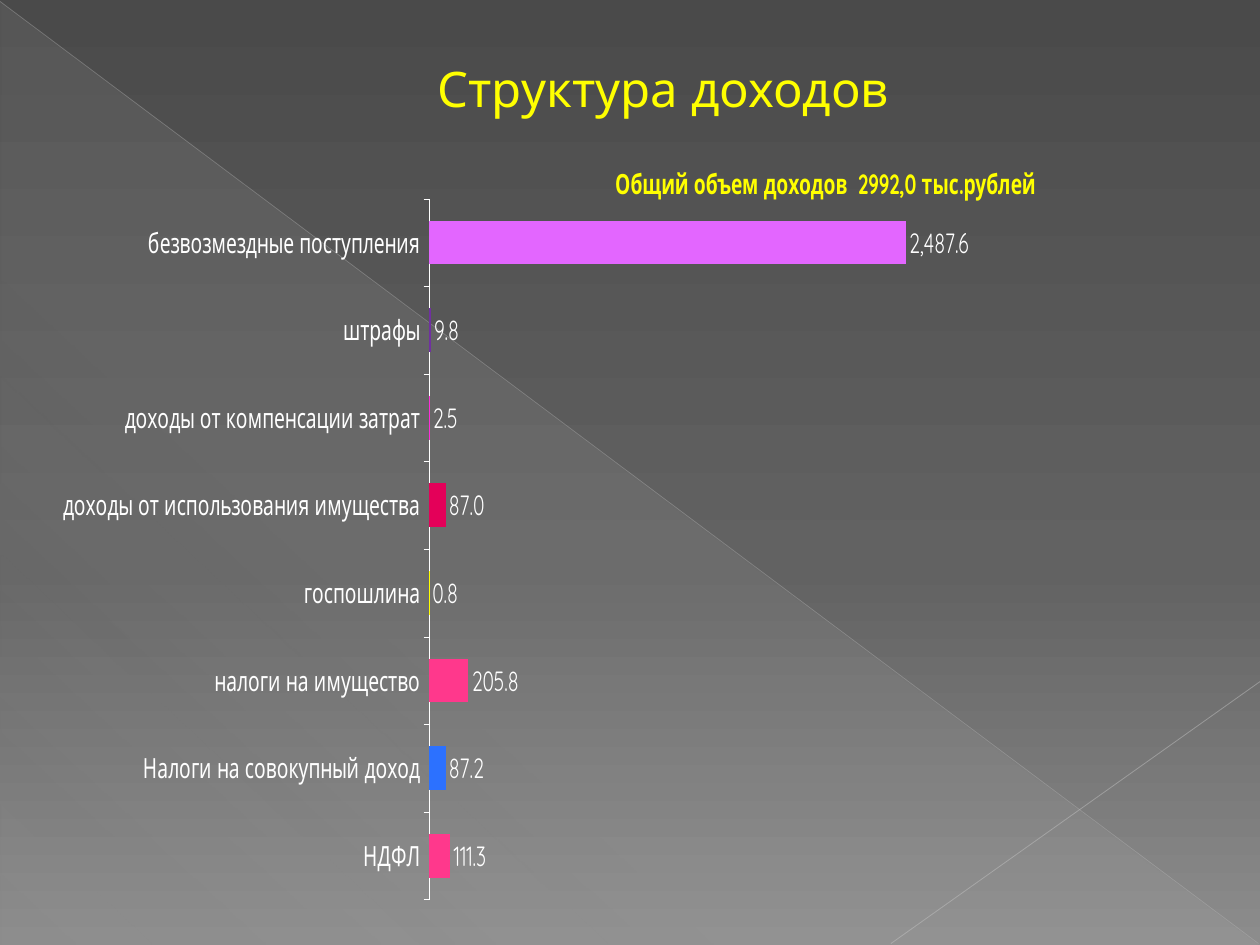
from lxml import etree
from pptx import Presentation
from pptx.chart.data import CategoryChartData
from pptx.dml.color import RGBColor
from pptx.enum.chart import XL_CHART_TYPE as ChartType
from pptx.enum.chart import XL_LABEL_POSITION as LabelPosition
from pptx.enum.chart import XL_TICK_MARK as TickMark
from pptx.enum.shapes import MSO_CONNECTOR as Connector
from pptx.enum.shapes import MSO_SHAPE as Shape
from pptx.enum.text import MSO_ANCHOR as Anchor
from pptx.enum.text import PP_ALIGN as Align
from pptx.oxml import parse_xml
from pptx.oxml.ns import nsdecls, qn
from pptx.util import Cm, Pt

FONT = "Quicksand"
COLORS = {
    "heading": "FFFF00", "heading_edge": "B12761", "text": "FFFFFF",
    "back_top": "4A4A4A", "back_middle": "626262", "back_bottom": "8C8C8C",
    "triangle": "D2D2D2", "diagonal": "BFBFBF", "corner": "C6C6C6",
    "pink": "FF388C", "blue": "2C71FF", "yellow": "FFFF00", "crimson": "E40059",
    "magenta": "FF2BD8", "purple": "7030A0", "violet": "E366FF",
}
INCOME = [
    ("НДФЛ", 111.3, "pink"),
    ("Налоги на совокупный доход", 87.2, "blue"),
    ("налоги на имущество", 205.8, "pink"),
    ("госпошлина", 0.8, "yellow"),
    ("доходы от использования имущества", 87.0, "crimson"),
    ("доходы от компенсации затрат", 2.5, "magenta"),
    ("штрафы", 9.8, "purple"),
    ("безвозмездные поступления", 2487.6, "violet"),
]


def rgb(name):
    return RGBColor.from_string(COLORS[name])


def set_gradient(fill, stops, angle):
    """Fill with (position %, colour name, opacity %) stops, angle clockwise."""
    fill.gradient()
    stop_list = fill.gradient_stops[0]._gs.getparent()
    gradient = stop_list.getparent()
    marks = "".join(
        f'<a:gs pos="{position * 1000}"><a:srgbClr val="{COLORS[color]}">'
        f'<a:alpha val="{opacity * 1000}"/></a:srgbClr></a:gs>'
        for position, color, opacity in stops)
    gradient.replace(stop_list, parse_xml(f'<a:gsLst {nsdecls("a")}>{marks}</a:gsLst>'))
    gradient.find(qn("a:lin")).set("ang", str(angle * 60000))


def add_triangle(slide):
    triangle = slide.shapes.add_shape(
        Shape.RIGHT_TRIANGLE, Cm(0.02), Cm(0.04), Cm(25.36), Cm(19))
    triangle.shadow.inherit = False
    triangle.line.fill.background()
    set_gradient(triangle.fill, [(0, "triangle", 10), (70, "triangle", 8),
                                 (100, "triangle", 1)], 133)


def add_line(slide, start, end, color, width, opacity):
    line = slide.shapes.add_connector(
        Connector.STRAIGHT, *(Cm(length) for length in start + end))
    line.line.color.rgb = rgb(color)
    line.line.width = Pt(width)
    tint = line.line._ln.find(".//" + qn("a:srgbClr"))
    etree.SubElement(tint, qn("a:alpha")).set("val", str(opacity * 1000))
    etree.SubElement(line._element.spPr, qn("a:effectLst"))


def set_font(font, size, color, bold=False):
    font.name = FONT
    font.size = Pt(size)
    font.bold = bold
    font.color.rgb = rgb(color)


def write_text(frame, text, size, color, bold=False, align=Align.CENTER, edge=None):
    paragraph = frame.paragraphs[0]
    paragraph.alignment = align
    run = paragraph.add_run()
    run.text = text
    set_font(run.font, size, color, bold)
    if edge:
        run._r.get_or_add_rPr().insert(0, parse_xml(
            f'<a:ln {nsdecls("a")} w="{Pt(0.5)}"><a:solidFill>'
            f'<a:srgbClr val="{COLORS[edge]}"/></a:solidFill></a:ln>'))
    return paragraph


def add_heading(slide):
    box = slide.shapes.add_textbox(Cm(1.27), Cm(0.78), Cm(22.86), Cm(2))
    frame = box.text_frame
    frame.word_wrap = True
    frame.vertical_anchor = Anchor.MIDDLE
    paragraph = write_text(frame, "Структура доходов", 28, "heading",
                           edge="heading_edge")
    paragraph._p.get_or_add_pPr().set("marL", str(Cm(1.35)))


def place(parent, index, target=None, **fractions):
    """Give a chart part a manual layout in fractions of the chart."""
    for old in parent.findall(qn("c:layout")):
        parent.remove(old)
    settings = {"layoutTarget": target} if target else {}
    settings |= {"xMode": "edge", "yMode": "edge"} | fractions
    layout = etree.Element(qn("c:layout"))
    manual = etree.SubElement(layout, qn("c:manualLayout"))
    for name, value in settings.items():
        etree.SubElement(manual, qn(f"c:{name}")).set("val", str(value))
    parent.insert(index, layout)


def style_axes(chart):
    categories = chart.category_axis
    categories.major_tick_mark = TickMark.OUTSIDE
    categories.format.line.color.rgb = rgb("text")
    categories.format.line.width = Pt(0.25)
    values = chart.value_axis
    values.visible = False
    values.has_major_gridlines = False
    values.minimum_scale = 0
    values.maximum_scale = 2600
    values.major_unit = 100


def style_bars(plot):
    plot.gap_width = 100
    plot.vary_by_categories = False
    series = plot.series[0]
    series.format.fill.solid()
    series.format.fill.fore_color.rgb = rgb("pink")
    for index, (_, _, color) in enumerate(INCOME):
        if color != "pink":
            fill = series.points[index].format.fill
            fill.solid()
            fill.fore_color.rgb = rgb(color)
    plot.has_data_labels = True
    labels = plot.data_labels
    labels.show_value = True
    labels.number_format = "#,##0.0"
    labels.number_format_is_linked = False
    labels.position = LabelPosition.OUTSIDE_END
    set_font(labels.font, 15.9, "text")


def add_income_chart(slide):
    data = CategoryChartData()
    data.categories = [label for label, _, _ in INCOME]
    data.add_series("Series 1", [value for _, value, _ in INCOME])
    chart = slide.shapes.add_chart(ChartType.BAR_CLUSTERED, Cm(1.27), Cm(2.77),
                                   Cm(23.34), Cm(16.28), data).chart
    set_font(chart.font, 15.9, "text")
    chart.has_legend = False
    chart.has_title = True
    write_text(chart.chart_title.text_frame,
               "Общий объем доходов  2992,0 тыс.рублей", 15.9, "heading", bold=True)
    place(chart.chart_title._element, 1, x=0.24, y=0.026)
    place(chart._chartSpace.chart.plotArea, 0, "inner",
          x=0.012, y=0.076, w=0.622, h=0.868)
    style_axes(chart)
    style_bars(chart.plots[0])


def main():
    deck = Presentation()
    deck.slide_width, deck.slide_height = Cm(25.4), Cm(19.05)
    slide = deck.slides.add_slide(deck.slide_layouts[6])
    set_gradient(slide.background.fill, [(0, "back_top", 100), (60, "back_middle", 100),
                                         (100, "back_bottom", 100)], 90)
    add_triangle(slide)
    add_line(slide, (0, 0.03), (25.37, 19.02), "diagonal", 0.39, 35)
    add_line(slide, (25.4, 13.74), (17.96, 19.02), "corner", 0.47, 45)
    add_heading(slide)
    add_income_chart(slide)
    deck.save("out.pptx")


if __name__ == "__main__":
    main()
